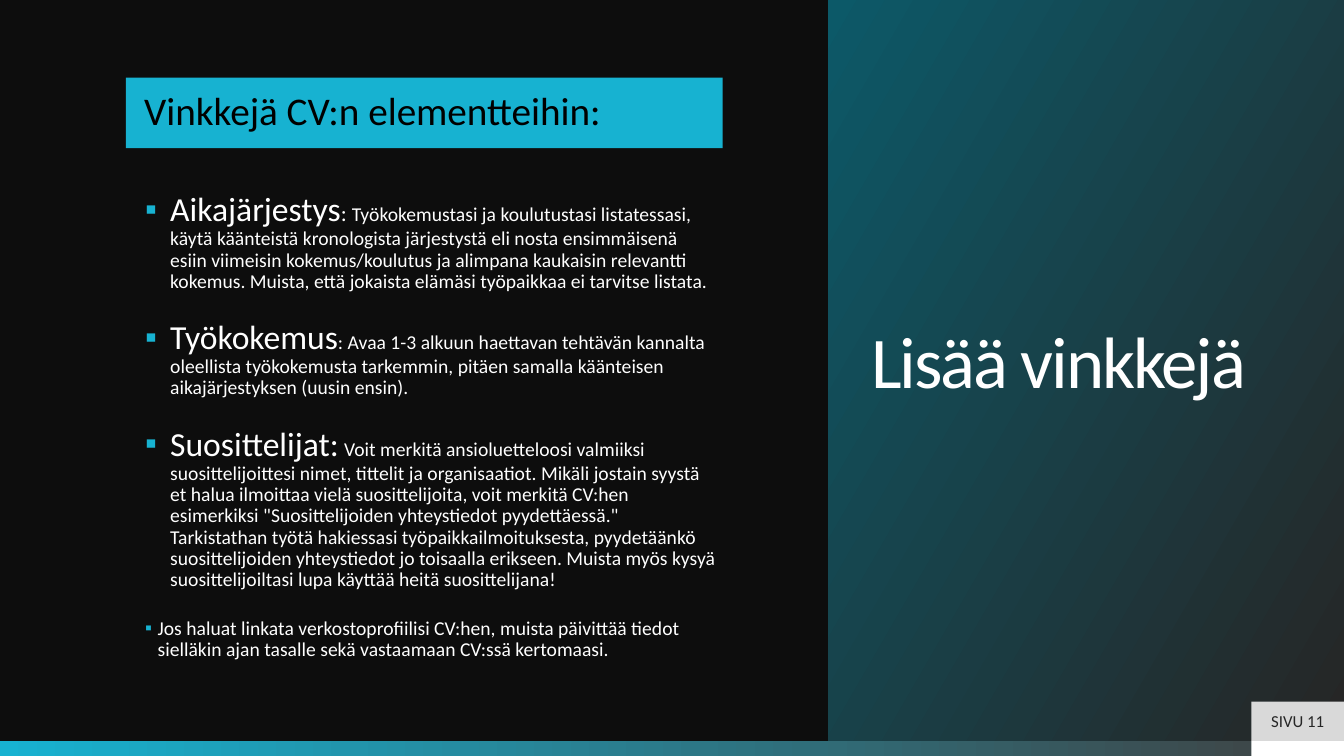
from dataclasses import dataclass

from lxml.etree import SubElement
from pptx import Presentation
from pptx.dml.color import RGBColor
from pptx.enum.shapes import MSO_SHAPE
from pptx.enum.text import MSO_ANCHOR, MSO_AUTO_SIZE, PP_ALIGN
from pptx.oxml.ns import qn
from pptx.util import Pt

FONT = "Calibri"
CYAN = "17B2D1"
WHITE = "FFFFFF"
STRIP_TOP = 529.2
CORNER_LEFT, CORNER_WIDTH = 893.9, 66.1


@dataclass
class Box:
    left: float
    top: float
    width: float
    height: float


@dataclass
class Tip:
    runs: list[tuple[str, float]]
    indent: float = 18


TIPS = [
    Tip([("Aikajärjestys", 24), (": ", 16),
         ("Työkokemustasi ja koulutustasi listatessasi, käytä käänteistä kronologista "
          "järjestystä eli nosta ensimmäisenä esiin viimeisin kokemus/koulutus ja alimpana "
          "kaukaisin relevantti kokemus. Muista, että jokaista elämäsi työpaikkaa ei "
          "tarvitse listata.", 14)]),
    Tip([("Työkokemus", 24),
         (": Avaa 1-3 alkuun haettavan tehtävän kannalta oleellista työkokemusta tarkemmin, "
          "pitäen samalla käänteisen aikajärjestyksen (uusin ensin).", 14)]),
    Tip([("Suosittelijat:", 24), (" ", 16),
         ("Voit merkitä ansioluetteloosi valmiiksi suosittelijoittesi nimet, tittelit ja "
          "organisaatiot. Mikäli jostain syystä et halua ilmoittaa vielä suosittelijoita, "
          "voit merkitä CV:hen esimerkiksi \"Suosittelijoiden yhteystiedot pyydettäessä.\" "
          "Tarkistathan työtä hakiessasi työpaikkailmoituksesta, pyydetäänkö suosittelijoiden "
          "yhteystiedot jo toisaalla erikseen. Muista myös kysyä suosittelijoiltasi lupa "
          "käyttää heitä suosittelijana!", 14)]),
    Tip([("Jos haluat linkata verkostoprofiilisi CV:hen, muista päivittää tiedot sielläkin "
          "ajan tasalle sekä vastaamaan CV:ssä kertomaasi.", 14)], indent=9),
]


def rgb(value: str) -> RGBColor:
    return RGBColor.from_string(value)


def place(sp, box: Box) -> None:
    sp.left, sp.top = Pt(box.left), Pt(box.top)
    sp.width, sp.height = Pt(box.width), Pt(box.height)


def fill_gradient(sp, stops: list[tuple[float, str]], angle: float) -> None:
    sp.fill.gradient()
    sp.fill.gradient_angle = angle
    for stop, (position, color) in zip(sp.fill.gradient_stops, stops):
        stop.position = position
        stop.color.rgb = rgb(color)


def add_rect(s, box: Box, color: str):
    sp = s.shapes.add_shape(MSO_SHAPE.RECTANGLE, Pt(box.left), Pt(box.top),
                            Pt(box.width), Pt(box.height))
    sp.shadow.inherit = False
    sp.fill.solid()
    sp.fill.fore_color.rgb = rgb(color)
    sp.line.fill.background()
    return sp


def set_frame(tf, anchor, left: float, top: float, right: float, bottom: float) -> None:
    tf.word_wrap = True
    tf.auto_size = MSO_AUTO_SIZE.NONE
    tf.vertical_anchor = anchor
    tf.margin_left, tf.margin_top = Pt(left), Pt(top)
    tf.margin_right, tf.margin_bottom = Pt(right), Pt(bottom)


def style_run(r, size: float, color: str) -> None:
    r.font.name = FONT
    r.font.size = Pt(size)
    r.font.color.rgb = rgb(color)


def set_line(tf, text: str, size: float, color: str, align=PP_ALIGN.LEFT,
             spacing: float = 1.0):
    tf.text = text
    p = tf.paragraphs[0]
    p.alignment = align
    p.line_spacing = spacing
    style_run(p.runs[0], size, color)
    return p.runs[0]


def add_bullet(p, indent: float) -> None:
    pPr = p._p.get_or_add_pPr()
    pPr.set("marL", str(Pt(indent)))
    pPr.set("indent", str(-Pt(indent)))
    color = SubElement(pPr, qn("a:buClr"))
    SubElement(color, qn("a:srgbClr"), val=CYAN)
    SubElement(pPr, qn("a:buChar"), char="▪")


def write_tips(tf, tips: list[Tip]) -> None:
    for i, tip in enumerate(tips):
        p = tf.add_paragraph() if i else tf.paragraphs[0]
        add_bullet(p, tip.indent)
        p.line_spacing = 0.9
        p.space_before = Pt(20 if i else 0)
        p.space_after = Pt(0)
        for text, size in tip.runs:
            r = p.add_run()
            r.text = text
            style_run(r, size, WHITE)


def main() -> None:
    prs = Presentation()
    prs.slide_width, prs.slide_height = Pt(960), Pt(540)
    s = prs.slides.add_slide(prs.slide_layouts[1])
    s.background.fill.solid()
    s.background.fill.fore_color.rgb = rgb("0D0D0D")

    # Bottom strip
    strip = add_rect(s, Box(0, STRIP_TOP, 960, 10.8), CYAN)
    fill_gradient(strip, [(0, CYAN), (1, "404040")], 0)
    add_rect(s, Box(CORNER_LEFT, STRIP_TOP, CORNER_WIDTH, 10.8), WHITE)

    # Title panel
    title = s.shapes.title
    place(title, Box(591.5, 0, 368.5, STRIP_TOP))
    fill_gradient(title, [(0.01, "262626"), (1, "0C5968")], 150)
    set_frame(title.text_frame, MSO_ANCHOR.MIDDLE, 31, 3.6, 31, 3.6)
    r = set_line(title.text_frame, "Lisää vinkkejä", 52, WHITE, spacing=0.7)
    r.font._element.set("spc", "-150")

    # Tips list
    body = s.placeholders[1]
    place(body, Box(66.2, 31, 484.6, 467.3))
    set_frame(body.text_frame, MSO_ANCHOR.TOP, 37.4, 106.6, 37.4, 13.7)
    write_tips(body.text_frame, TIPS)

    # List heading
    heading = add_rect(s, Box(90, 55.4, 426.2, 50.4), CYAN)
    set_frame(heading.text_frame, MSO_ANCHOR.MIDDLE, 13, 0, 13, 0)
    set_line(heading.text_frame, "Vinkkejä CV:n elementteihin:", 28, "000000", spacing=0.9)

    # Page badge
    badge = add_rect(s, Box(CORNER_LEFT, 501.1, CORNER_WIDTH, 28.1), "D9D9D9")
    set_frame(badge.text_frame, MSO_ANCHOR.MIDDLE, 7.2, 3.6, 7.2, 3.6)
    set_line(badge.text_frame, "SIVU 11", 12, "262626", PP_ALIGN.CENTER)

    prs.save("out.pptx")


if __name__ == "__main__":
    main()
